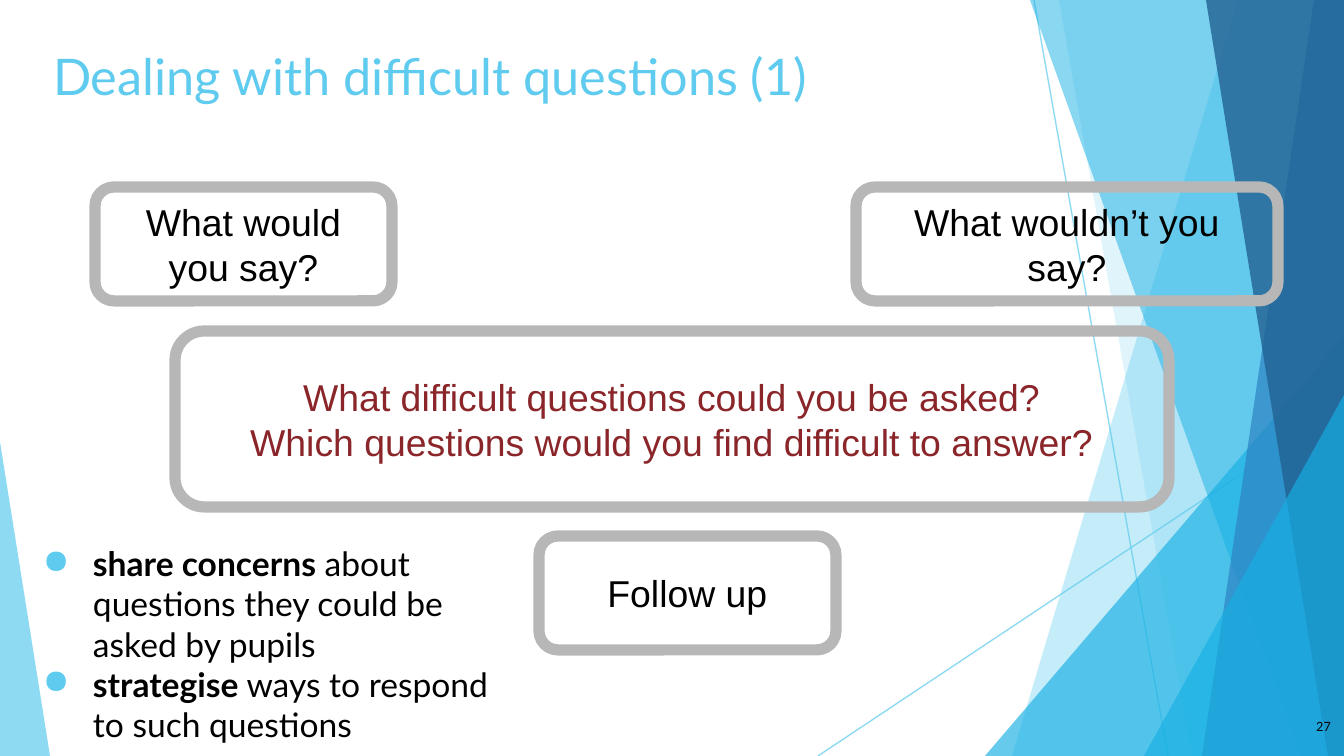
import pptx
import pptx.util
import pptx.dml.color
import pptx.enum.shapes
import pptx.enum.text
import pptx.oxml.ns
import lxml.etree

RGB = pptx.dml.color.RGBColor
KIND = pptx.enum.shapes.MSO_SHAPE
ALIGN = pptx.enum.text.PP_ALIGN
ANCHOR = pptx.enum.text.MSO_ANCHOR
FIT = pptx.enum.text.MSO_AUTO_SIZE
qn = pptx.oxml.ns.qn

SKY = RGB(0x5F, 0xCB, 0xEF)
CYAN = RGB(0x17, 0xB0, 0xE4)
BLUE = RGB(0x2E, 0x83, 0xC3)
NAVY = RGB(0x22, 0x62, 0x92)
GREY = RGB(0xB7, 0xB7, 0xB7)
WINE = RGB(0x8A, 0x25, 0x29)
BLACK = RGB(0, 0, 0)

WIDE, HIGH = 1344, 756
SCALE = 914400 / 134.4
INSET = 13

# Start and end of each thin line
RAYS = [(1034, 0, 1168, HIGH), (WIDE, 406, 818, HIGH)]

# Bands reach the right edge: top x, bottom x, colour, opacity.
# Triangles: box, tip position, colour, opacity.
FACETS = [
    ("band", (1238, 1012), SKY, 36),
    ("band", (1059, 1192), SKY, 20),
    ("tri", (985, 336, 359, 420, 1), CYAN, 66),
    ("band", (1030, 1301), CYAN, 50),
    ("band", (1314, 1202), BLUE, 70),
    ("band", (1206, 1328), NAVY, 80),
    ("tri", (1144, 395, 200, 361, 1), CYAN, 66),
    ("tri", (0, 442, 50, 314, 0), SKY, 70),
]

TITLE = "Dealing with difficult questions (1)"
NUMBER = "27"
CARDS = [
    ((175, 331, 994, 176), WINE, [
        "What difficult questions could you be asked?",
        "Which questions would you find difficult to answer?"]),
    ((95, 187, 297, 114), BLACK, ["What would you say?"]),
    ((856, 187, 422, 114), BLACK, ["What wouldn’t you say?"]),
    ((539, 536, 297, 114), BLACK, ["Follow up"]),
]
TASKS = [
    ("share concerns", " about questions they could be asked by pupils", 16),
    ("strategise", " ways to respond to such questions", 0),
]


def px(num):
    return pptx.util.Emu(round(num * SCALE))


def put(thing, vals):
    """Set each attribute of thing from a dict."""
    for key, val in vals.items():
        setattr(thing, key, val)


def fade(shape, pct):
    """Give the colours set so far on a shape an opacity in percent."""
    for node in shape._element.spPr.findall(".//" + qn("a:srgbClr")):
        lxml.etree.SubElement(node, qn("a:alpha")).set("val", str(pct * 1000))


def add_run(para, text, size, font, color, bold=False):
    run = para.add_run()
    run.text = text
    put(run.font, {"size": pptx.util.Pt(size), "name": font, "bold": bold})
    run.font.color.rgb = color


def set_frame(frame, top=INSET, **vals):
    put(frame, {"word_wrap": True,
                "margin_left": px(INSET), "margin_right": px(INSET),
                "margin_top": px(top), "margin_bottom": px(top), **vals})


def add_text(slide, box, top=INSET, **vals):
    frame = slide.shapes.add_textbox(*map(px, box)).text_frame
    set_frame(frame, top, **vals)
    return frame


def next_para(frame, i):
    return frame.add_paragraph() if i else frame.paragraphs[0]


def add_ray(slide, ends):
    ray = slide.shapes.add_connector(
        pptx.enum.shapes.MSO_CONNECTOR.STRAIGHT, *map(px, ends))
    ray.line.width = pptx.util.Pt(0.75)
    ray.line.color.rgb = SKY
    fade(ray, 70)
    lxml.etree.SubElement(ray._element.spPr, qn("a:effectLst"))


def add_facet(slide, kind, geom, color, pct):
    if kind == "band":
        top, low = geom
        pen = slide.shapes.build_freeform(top, 0, SCALE)
        pen.add_line_segments([(WIDE, 0), (WIDE, HIGH), (low, HIGH)])
        shape = pen.convert_to_shape()
    else:
        *box, tip = geom
        shape = slide.shapes.add_shape(KIND.ISOSCELES_TRIANGLE, *map(px, box))
        shape.adjustments[0] = tip
    shape.shadow.inherit = False
    shape.fill.solid()
    shape.fill.fore_color.rgb = color
    fade(shape, pct)
    shape.line.fill.background()


def add_card(slide, box, color, lines):
    card = slide.shapes.add_shape(KIND.ROUNDED_RECTANGLE, *map(px, box))
    card.shadow.inherit = False
    card.fill.background()
    card.line.color.rgb = GREY
    card.line.width = pptx.util.Pt(6)
    set_frame(card.text_frame, vertical_anchor=ANCHOR.MIDDLE)
    for i, line in enumerate(lines):
        para = next_para(card.text_frame, i)
        para.alignment = ALIGN.CENTER
        add_run(para, line, 20, "Arial", color)


def add_bullet(para):
    props = para._p.get_or_add_pPr()
    props.set("marL", str(px(67)))
    props.set("indent", str(px(-50)))
    tint = lxml.etree.SubElement(props, qn("a:buClr"))
    lxml.etree.SubElement(tint, qn("a:srgbClr")).set("val", str(SKY))
    lxml.etree.SubElement(props, qn("a:buChar")).set("char", "●")


def main():
    deck = pptx.Presentation()
    put(deck, {"slide_width": px(WIDE), "slide_height": px(HIGH)})
    slide = deck.slides.add_slide(deck.slide_layouts[6])

    for ends in RAYS:
        add_ray(slide, ends)
    for facet in FACETS:
        add_facet(slide, *facet)

    head = add_text(slide, (40, 32, 1140, 85))
    add_run(head.paragraphs[0], TITLE, 27, "Lato", SKY)

    foot = add_text(slide, (1263, 698, 81, 58), vertical_anchor=ANCHOR.MIDDLE)
    foot.paragraphs[0].alignment = ALIGN.RIGHT
    add_run(foot.paragraphs[0], NUMBER, 6.8, "Lato", BLACK)

    for card in CARDS:
        add_card(slide, *card)

    tasks = add_text(slide, (13, 536, 496, 218), top=7,
                     auto_size=FIT.SHAPE_TO_FIT_TEXT)
    for i, (verb, rest, gap) in enumerate(TASKS):
        para = next_para(tasks, i)
        para.space_before = pptx.util.Pt(gap)
        add_bullet(para)
        add_run(para, verb, 18, "Lato", BLACK, bold=True)
        add_run(para, rest, 18, "Lato", BLACK)

    deck.save("out.pptx")


if __name__ == "__main__":
    main()
